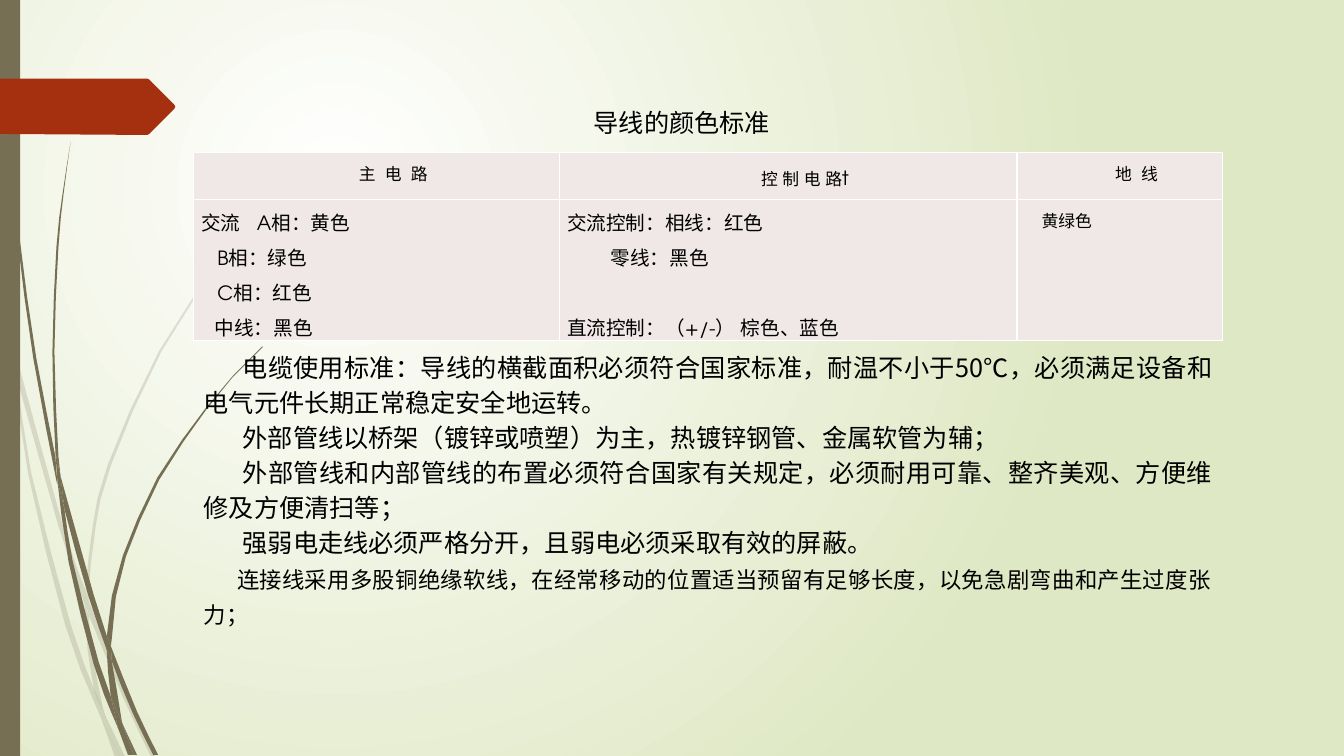
from math import dist

from lxml.etree import SubElement
from pptx import Presentation
from pptx.dml.color import RGBColor
from pptx.enum.shapes import MSO_SHAPE
from pptx.enum.text import MSO_ANCHOR, MSO_AUTO_SIZE, PP_ALIGN
from pptx.oxml import parse_xml
from pptx.oxml.ns import nsdecls, qn
from pptx.util import Cm, Pt

COLORS = {"white": "FFFFFF", "meadow": "DFE8C4", "olive": "766F54",
          "rust": "A53010", "cell": "F0E8E7", "text": "000000"}
CJK, LATIN = "Noto Sans CJK SC", "TeX Gyre Adventor"
GRID = 0.0254  # cm per unit of the outline coordinates

# Each blade piece is a pair of edges, both running from tip to root.
PALE_BLADES = [
    ([(0, 282), (9, 322), (11, 350)], [(0, 299), (10, 344), (11, 350)]),
    ([(14, 345), (62, 520), (85, 586)], [(17, 376), (58, 522), (84, 599)]),
    ([(88, 596), (127, 692), (155, 751)], [(88, 610), (123, 694), (150, 751)]),
    ([(105, 711), (124, 751)], [(105, 711), (119, 751)]),
    ([(11, 350), (17, 376), (31, 469), (70, 619), (93, 683), (101, 714)],
     [(11, 350), (28, 470), (65, 621), (92, 693), (101, 714)]),
    ([(84, 599), (87, 646), (93, 683), (96, 692), (105, 711)],
     [(84, 599), (88, 610), (91, 646), (103, 706), (105, 711)]),
    ([(312, 153), (268, 197), (228, 244), (158, 348), (107, 461), (92, 522), (85, 584)],
     [(312, 154), (268, 198), (229, 245), (160, 349), (110, 462), (95, 522), (88, 584),
      (88, 596)]),
    ([(101, 714), (114, 751)], [(101, 714), (119, 751)]),
    ([(85, 586), (84, 599), (88, 608)], [(85, 586), (88, 596), (88, 610)]),
    ([(93, 683), (101, 714), (119, 751)], [(93, 683), (105, 711), (119, 751)]),
]
DARK_BLADES = [
    ([(3, 0), (4, 48), (7, 110), (17, 233), (33, 355), (56, 477), (57, 481)],
     [(4, 0), (5, 48), (8, 109), (19, 232), (36, 355), (55, 453), (57, 481)]),
    ([(60, 472), (93, 590), (106, 631)], [(60, 472), (64, 505), (88, 592), (106, 645)]),
    ([(110, 641), (136, 706), (157, 749)], [(110, 641), (111, 656), (132, 708), (152, 749)]),
    ([(57, 477), (64, 505), (72, 556), (98, 657), (110, 691), (117, 722)],
     [(57, 477), (68, 557), (93, 659), (111, 708), (117, 722)]),
    ([(70, 141), (62, 193), (56, 245), (52, 349), (55, 449), (60, 472)],
     [(70, 141), (63, 193), (58, 245), (54, 349), (58, 453), (60, 472)]),
    ([(122, 719), (136, 749)], [(122, 719), (133, 749)]),
    ([(55, 449), (57, 477), (64, 505)], [(55, 449), (60, 472), (64, 505)]),
    ([(260, 344), (231, 373), (204, 405), (156, 474), (122, 551), (111, 591), (106, 631)],
     [(261, 344), (231, 374), (205, 406), (158, 476), (125, 552), (115, 592), (111, 633),
      (110, 641)]),
    ([(117, 722), (127, 749)], [(117, 722), (131, 749)]),
    ([(106, 645), (110, 691), (122, 719)], [(106, 645), (111, 656), (121, 716), (122, 719)]),
    ([(106, 631), (106, 645), (111, 656)], [(106, 631), (110, 641), (111, 656)]),
    ([(110, 691), (117, 722), (130, 749)], [(110, 691), (122, 719), (133, 749)]),
]
TAG = [(0, 0), (146, 0), (148, 1), (173, 26), (174, 28), (173, 30), (148, 55), (146, 56), (0, 55)]

# Spans of each header, then the points added to each of its spaces.
HEADERS = [([("主 电 路", 12)], 3.3), ([("控 制 电 路", 12), ("t", 14)], 0), ([("地 线", 12)], 3.3)]
# Each line is its text, left margin in cm, space before and added space width in points.
WIRES = [
    [("交流 A相：黄色", 0, 0, 7.8), ("B相：绿色", 0.41, 0, 0), ("C相：红色", 0.41, 0, 0),
     ("中线：黑色", 0.34, 0, 0)],
    [("交流控制：相线：红色", 0, 0, 0), ("零线：黑色", 1.1, 0, 0),
     ("直流控制：（+/-） 棕色、蓝色", 0, 25, 0)],
]
RULES = [
    ("电缆使用标准：导线的横截面积必须符合国家标准，耐温不小于50℃，必须满足设备和电气元件长期正常稳定安全地运转。", 18),
    ("外部管线以桥架（镀锌或喷塑）为主，热镀锌钢管、金属软管为辅；", 18),
    ("外部管线和内部管线的布置必须符合国家有关规定，必须耐用可靠、整齐美观、方便维修及方便清扫等；", 18),
    ("强弱电走线必须严格分开，且弱电必须采取有效的屏蔽。", 18),
    ("连接线采用多股铜绝缘软线，在经常移动的位置适当预留有足够长度，以免急剧弯曲和产生过度张力；", 16),
]


def color(name):
    return RGBColor.from_string(COLORS[name])


def write(para, spans, font=CJK, align=PP_ALIGN.JUSTIFY, spacing=Pt(25),
          indent=0, margin=0, before=0, gap=0):
    """Fill a paragraph with (text, size) spans; indent and margin are in cm, gap widens spaces."""
    para.alignment, para.line_spacing = align, spacing
    para.space_before, para.space_after = Pt(before), Pt(0)
    properties = para._p.get_or_add_pPr()
    properties.set("marL", str(Cm(margin)))
    properties.set("indent", str(Cm(indent)))
    SubElement(properties, qn("a:buNone"))
    for text, size in spans:
        pieces = text.replace(" ", "| |").split("|") if gap else [text]
        for piece in pieces:
            span = para.add_run()
            span.text = piece
            span.font.size, span.font.bold = Pt(size), False
            span.font.color.rgb = color("text")
            span.font.name = font
            SubElement(span.font._element, qn("a:ea")).set("typeface", font)
            if piece == " ":
                span.font._element.set("spc", str(round(gap * 100)))


def paragraphs(frame, count):
    return [frame.paragraphs[0]] + [frame.add_paragraph() for _ in range(count - 1)]


def paint(shape, name, alpha=None):
    shape.shadow.inherit = False
    shape.fill.solid()
    shape.fill.fore_color.rgb = color(name)
    shape.line.fill.background()
    if alpha:
        tint = shape._element.spPr.find(".//" + qn("a:srgbClr"))
        SubElement(tint, qn("a:alpha")).set("val", str(alpha * 1000))


def smooth(points, longest=45):
    """Add a point on the Catmull-Rom curve in the middle of each long step."""
    padded = [points[0], *points, points[-1]]
    curve = []
    for a, b, c, d in zip(padded, padded[1:], padded[2:], padded[3:]):
        curve.append(b)
        if dist(b, c) > longest:
            curve.append(tuple((9 * (q + r) - p - s) / 16 for p, q, r, s in zip(a, b, c, d)))
    return curve + [points[-1]]


def outline(shapes, points, left, top):
    placed = [(left + Cm(x * GRID), top + Cm(y * GRID)) for x, y in points]
    builder = shapes.build_freeform(*placed[0])
    builder.add_line_segments(placed[1:], close=True)
    return builder.convert_to_shape()


def draw_grass(page, blades, left, top, alpha=None):
    group = page.shapes.add_group_shape()
    for one_edge, other_edge in blades:
        points = smooth(one_edge) + smooth(other_edge)[::-1]
        if points[0] == points[-1]:
            points.pop()
        paint(outline(group.shapes, points, left, top), "olive", alpha)


def draw_background(page):
    fill = page.background.fill
    fill.gradient()
    for position, (stop, name) in enumerate(zip(fill.gradient_stops, ("white", "meadow"))):
        stop.color.rgb = color(name)
        stop.position = position
    gradient = page.element.find(".//" + qn("a:gradFill"))
    gradient.remove(gradient.find(qn("a:lin")))
    gradient.append(parse_xml(
        f'<a:path {nsdecls("a")} path="circle">'
        '<a:fillToRect l="50000" t="50000" r="100000" b="100000"/></a:path>'))


def draw_side(page, left, top, height):
    draw_grass(page, PALE_BLADES, left, top, alpha=20)
    draw_grass(page, DARK_BLADES, left, top)
    bar = page.shapes.add_shape(MSO_SHAPE.RECTANGLE, left, top, Cm(0.51), height)
    paint(bar, "olive")
    paint(outline(page.shapes, TAG, left, top + Cm(1.98)), "rust")


def fill_placeholder(box, left, top, width, height, lines, indents):
    box.left, box.top, box.width, box.height = left, top, width, height
    frame = box.text_frame
    frame.word_wrap, frame.auto_size = True, MSO_AUTO_SIZE.NONE
    frame.vertical_anchor = MSO_ANCHOR.TOP
    for para, line, indent in zip(paragraphs(frame, len(lines)), lines, indents):
        write(para, [line], indent=indent)


def style_cell(cell):
    cell.margin_left = cell.margin_right = Cm(0.19)
    cell.margin_top = cell.margin_bottom = 0
    cell.fill.solid()
    cell.fill.fore_color.rgb = color("cell")
    for place, side in enumerate(("lnL", "lnR", "lnT", "lnB")):
        cell._tc.tcPr.insert(place, parse_xml(
            f'<a:{side} {nsdecls("a")} w="{Pt(1)}"><a:solidFill>'
            f'<a:srgbClr val="{COLORS["white"]}"/></a:solidFill></a:{side}>'))


def draw_wire_table(page, left, top, width, height):
    table = page.shapes.add_table(2, 3, left, top, width, height).table
    table.first_row = table.horz_banding = False
    for column, size in zip(table.columns, (9.22, 11.53, 5.18)):
        column.width = Cm(size)
    table.rows[0].height = Cm(1.18)
    table.rows[1].height = height - Cm(1.18)
    for cell in table.iter_cells():
        style_cell(cell)
    for column, (spans, gap) in enumerate(HEADERS):
        write(table.cell(0, column).text_frame.paragraphs[0], spans, font=LATIN,
              align=PP_ALIGN.CENTER, spacing=2.0, indent=0.84, gap=gap)
    for column, lines in enumerate(WIRES):
        paras = paragraphs(table.cell(1, column).text_frame, len(lines))
        for para, (text, margin, before, gap) in zip(paras, lines):
            write(para, [(text, 14)], font=LATIN, margin=margin, before=before, gap=gap)
    write(table.cell(1, 2).text_frame.paragraphs[0], [("黄绿色", 12)], font=LATIN,
          spacing=2.0, indent=0.43)


def main():
    deck = Presentation()
    deck.slide_width, deck.slide_height = Cm(33.87), Cm(19.05)
    page = deck.slides.add_slide(deck.slide_layouts[1])
    title, body = page.placeholders
    draw_background(page)
    draw_side(page, Cm(0), Cm(0), deck.slide_height)
    fill_placeholder(title, Cm(13.87), Cm(2.45), Cm(16.94), Cm(1.04), [("导线的颜色标准", 18)], [0.84])
    draw_wire_table(page, Cm(4.88), Cm(3.85), Cm(25.93), Cm(4.72))
    fill_placeholder(body, Cm(4.88), Cm(8.63), Cm(25.93), Cm(7.26), RULES, [0.98] * 4 + [0.84])
    for box in (title, body):
        page.shapes.element.append(box.element)
    deck.save("out.pptx")


if __name__ == "__main__":
    main()
